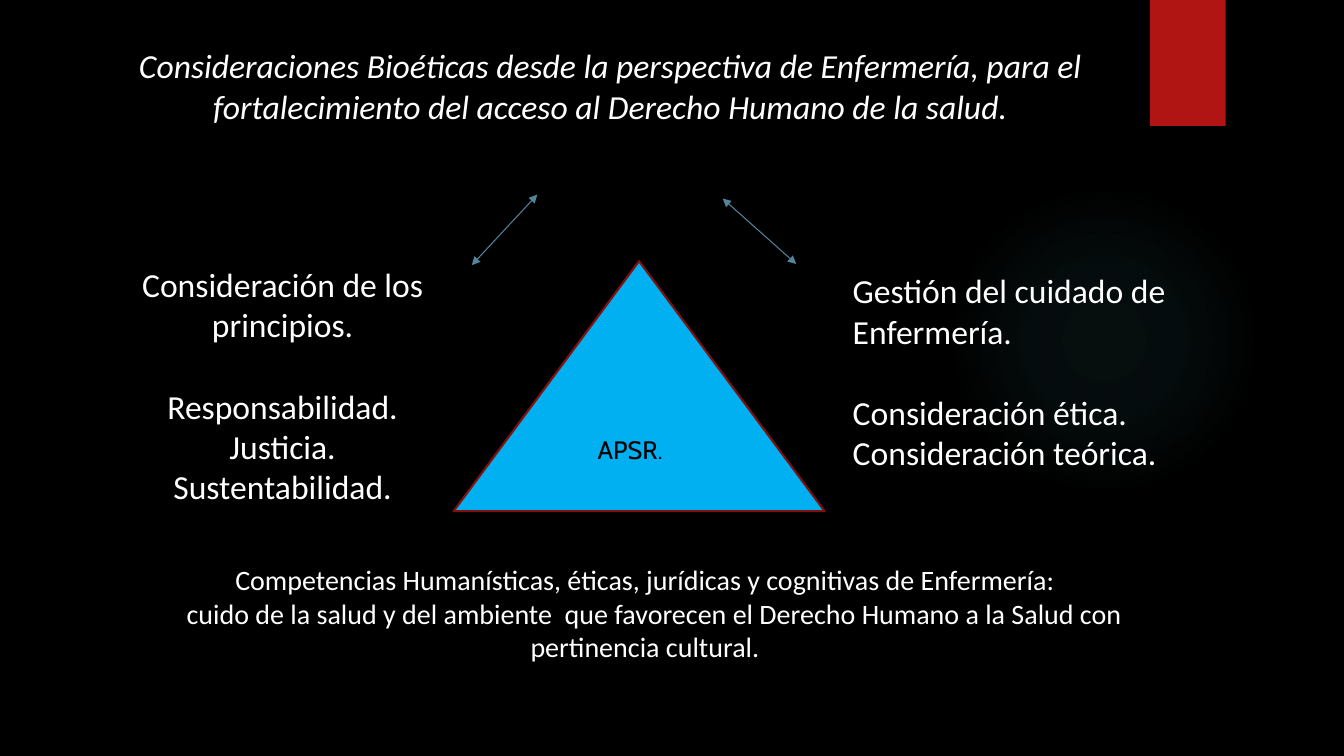
import pptx
import pptx.util
import pptx.dml.color
import pptx.enum.shapes
import pptx.enum.text
import pptx.oxml
import pptx.oxml.ns

Pt = pptx.util.Pt
RGB = pptx.dml.color.RGBColor.from_string
SHAPE = pptx.enum.shapes.MSO_SHAPE
ALIGN = pptx.enum.text.PP_ALIGN
NS = pptx.oxml.ns.nsdecls("a")
COLORS = {"bg": "000000", "text": "FFFFFF", "glow": "50B9C1", "tab": "B01513",
          "triangle": "00B0F0", "edge": "82100E", "arrow": "54849A", "label": "000000"}


def write(sp, box, lines, size, align=ALIGN.CENTER, font="Calibri",
          color="text", italic=False, gap_at=None):
    """Place a text shape and fill it, one paragraph per line."""
    sp.left, sp.top, sp.width, sp.height = [Pt(v) for v in box]
    tf = sp.text_frame
    tf.word_wrap = True
    tf.auto_size = pptx.enum.text.MSO_AUTO_SIZE.NONE
    tf.vertical_anchor = pptx.enum.text.MSO_ANCHOR.TOP
    for i, line in enumerate(lines):
        p = tf.paragraphs[0] if i == 0 else tf.add_paragraph()
        pPr = p._p.get_or_add_pPr()
        pPr.set("marL", "0")
        pPr.set("indent", "0")
        pPr.append(pptx.oxml.parse_xml(f"<a:buNone {NS}/>"))
        p.alignment = align
        p.space_before = Pt(29.3 if i == gap_at else 0)
        r = p.add_run()
        r.text = line
        r.font.name, r.font.size, r.font.italic = font, Pt(size), italic
        r.font.color.rgb = RGB(COLORS[color])
    return tf


def add_shape(kind, box, fill=None):
    sp = s.shapes.add_shape(kind, *[Pt(v) for v in box])
    sp.shadow.inherit = False
    sp.line.fill.background()
    if fill:
        sp.fill.solid()
        sp.fill.fore_color.rgb = RGB(COLORS[fill])
    return sp


prs = pptx.Presentation()
prs.slide_width, prs.slide_height = Pt(960), Pt(540)
s = prs.slides.add_slide(prs.slide_layouts[3])
s.background.fill.solid()
s.background.fill.fore_color.rgb = RGB(COLORS["bg"])
title, left, right = s.placeholders

# Backdrop: soft glow and red tab, behind the text
glow = add_shape(SHAPE.OVAL, (677.5, 131.8, 221.8, 221.8))
stops = "".join(
    f'<a:gs pos="{pos}000"><a:srgbClr val="{COLORS["glow"]}">'
    f'<a:alpha val="{alpha}000"/></a:srgbClr></a:gs>'
    for pos, alpha in ((0, 7), (36, 6), (69, 0)))
glow._element.spPr.find(pptx.oxml.ns.qn("a:prstGeom")).addnext(pptx.oxml.parse_xml(
    f'<a:gradFill {NS}><a:gsLst>{stops}</a:gsLst><a:path path="circle">'
    '<a:fillToRect l="50000" t="50000" r="50000" b="50000"/></a:path></a:gradFill>'))
tab = add_shape(SHAPE.RECTANGLE, (821.5, 0, 54, 90), "tab")
for sp in (tab, glow):
    s.shapes._spTree.insert(2, sp._element)

# Title and the two side lists
write(title, (80.6, 28.8, 710.6, 65.5),
      ["Consideraciones Bioéticas desde la perspectiva de Enfermería, "
       "para el fortalecimiento del acceso al Derecho Humano de la salud."],
      24, italic=True)
write(left, (80.6, 185, 242.6, 181.4),
      ["Consideración de los principios.", "Responsabilidad.", "Justicia.",
       "Sustentabilidad."], 24, gap_at=1)
write(right, (601.9, 189.4, 267.1, 220.3),
      ["Gestión del cuidado de Enfermería.", "Consideración ética.",
       "Consideración teórica."], 24, align=ALIGN.LEFT, gap_at=1)

# Triangle with its label
triangle = add_shape(SHAPE.ISOSCELES_TRIANGLE, (324, 186.5, 265, 178.6), "triangle")
triangle.line.color.rgb = RGB(COLORS["edge"])
triangle.line.width = Pt(1.5)
label = s.shapes.add_textbox(0, 0, 0, 0)
write(label, (394.7, 306.7, 110.9, 28.8), ["APSR."], 18, font="Cabin", color="label")

# Competences below the triangle
competences = s.shapes.add_textbox(0, 0, 0, 0)
tf = write(competences, (69.8, 398.2, 781.9, 79.9),
           ["Competencias Humanísticas, éticas, jurídicas y cognitivas de Enfermería:",
            "cuido de la salud y del ambiente  que favorecen el Derecho Humano "
            "a la Salud con pertinencia cultural."], 20)
tf.paragraphs[1]._p.pPr.set("indent", str(Pt(13.5)))

# Double-headed arrows
for ends in ((383.8, 139, 337, 189.4), (516.2, 141.8, 568.8, 188.6)):
    arrow = s.shapes.add_connector(pptx.enum.shapes.MSO_CONNECTOR.STRAIGHT,
                                   *[Pt(v) for v in ends])
    arrow.line.color.rgb = RGB(COLORS["arrow"])
    arrow.line.width = Pt(0.75)
    ln = arrow.line._get_or_add_ln()
    for end in ("headEnd", "tailEnd"):
        ln.append(pptx.oxml.parse_xml(f'<a:{end} {NS} type="triangle"/>'))
    arrow._element.spPr.append(pptx.oxml.parse_xml(f"<a:effectLst {NS}/>"))

prs.save("out.pptx")
